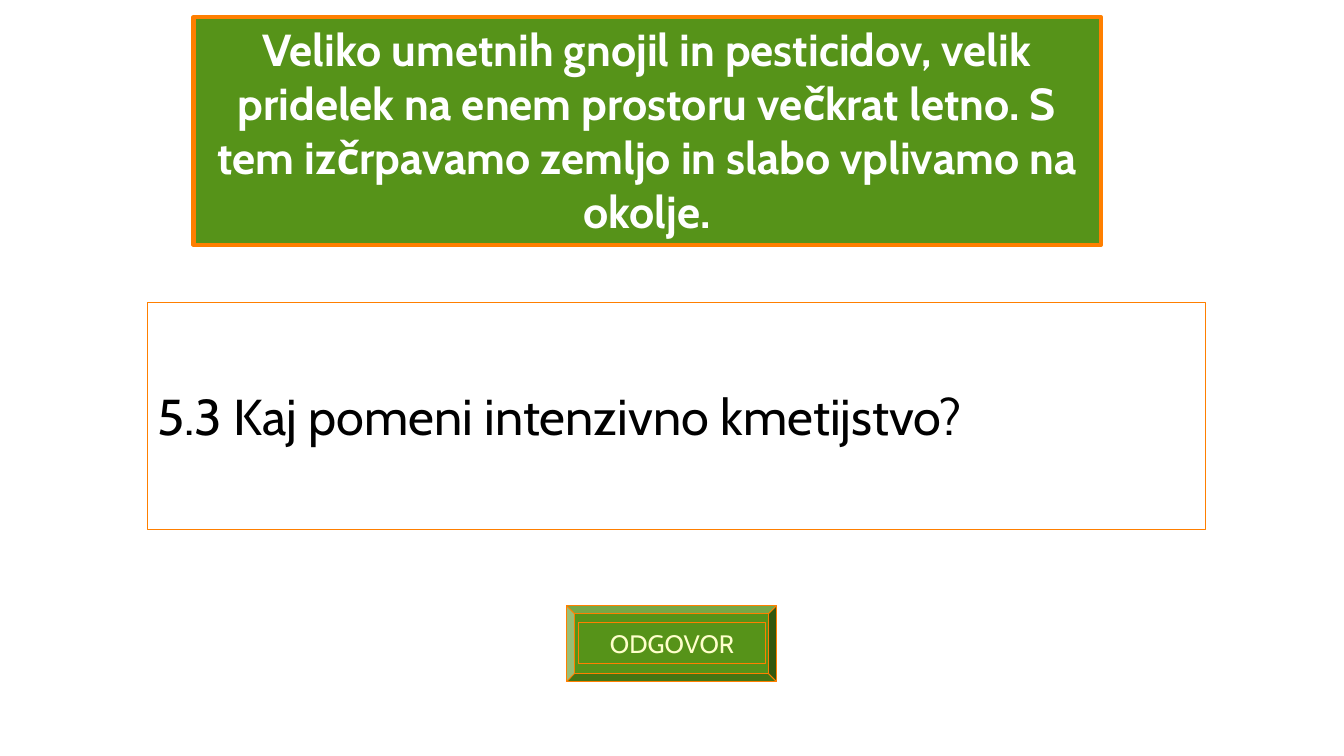
from dataclasses import dataclass

from pptx import Presentation
from pptx.dml.color import RGBColor
from pptx.enum.shapes import MSO_SHAPE
from pptx.enum.text import MSO_ANCHOR, PP_ALIGN
from pptx.shapes.autoshape import Shape
from pptx.util import Inches, Pt

RECT, BEVEL = MSO_SHAPE.RECTANGLE, MSO_SHAPE.BEVEL
TOP, MIDDLE = MSO_ANCHOR.TOP, MSO_ANCHOR.MIDDLE
LEFT, CENTER = PP_ALIGN.LEFT, PP_ALIGN.CENTER

FONT = "Cabin"
COLORS = {
    "green": "569319",
    "orange": "FF7F00",
    "white": "FFFFFF",
    "cream": "FFFFCC",
    "black": "000000",
}


@dataclass
class Box:
    left: float
    top: float
    width: float
    height: float
    fill: str = "green"
    line_width: float = 0.75
    text: str = ""
    size: int = 18
    color: str = "white"
    bold: bool = False
    align: PP_ALIGN = CENTER
    anchor: MSO_ANCHOR = TOP


ANSWER = Box(1.92, 0.17, 9, 2.26, line_width=3, size=32, bold=True,
             text="Veliko umetnih gnojil in pesticidov, velik pridelek na enem "
                  "prostoru večkrat letno. S tem izčrpavamo zemljo in slabo "
                  "vplivamo na okolje.")
QUESTION = Box(1.46, 3, 10.5, 2.25, fill="white", size=36, color="black",
               align=LEFT, anchor=MIDDLE,
               text="5.3 Kaj pomeni intenzivno kmetijstvo?")
BUTTON = Box(5.62, 6.01, 2.08, 0.75)
BUTTON_LABEL = Box(5.74, 6.18, 1.85, 0.4, text="ODGOVOR", color="cream")


def rgb(name: str) -> RGBColor:
    return RGBColor.from_string(COLORS[name])


def add_box(shapes, box: Box, kind: MSO_SHAPE = RECT) -> Shape:
    """Draw an outlined box, with its text if it has any."""
    sp = shapes.add_shape(kind, Inches(box.left), Inches(box.top),
                          Inches(box.width), Inches(box.height))
    sp.shadow.inherit = False
    sp.fill.solid()
    sp.fill.fore_color.rgb = rgb(box.fill)
    sp.line.color.rgb = rgb("orange")
    sp.line.width = Pt(box.line_width)
    if box.text:
        tf = sp.text_frame
        tf.word_wrap = True
        tf.vertical_anchor = box.anchor
        tf.text = box.text
        p = tf.paragraphs[0]
        p.alignment = box.align
        font = p.runs[0].font
        font.name = FONT
        font.size = Pt(box.size)
        font.bold = box.bold
        font.color.rgb = rgb(box.color)
    return sp


def main() -> None:
    prs = Presentation()
    prs.slide_width, prs.slide_height = Inches(13.33), Inches(7.5)
    s = prs.slides.add_slide(prs.slide_layouts[6])

    button = s.shapes.add_group_shape()
    bevel = add_box(button.shapes, BUTTON, BEVEL)
    bevel.adjustments[0] = 0.104
    add_box(button.shapes, BUTTON_LABEL)

    for box in (ANSWER, QUESTION):
        add_box(s.shapes, box)

    prs.save("out.pptx")


if __name__ == "__main__":
    main()
